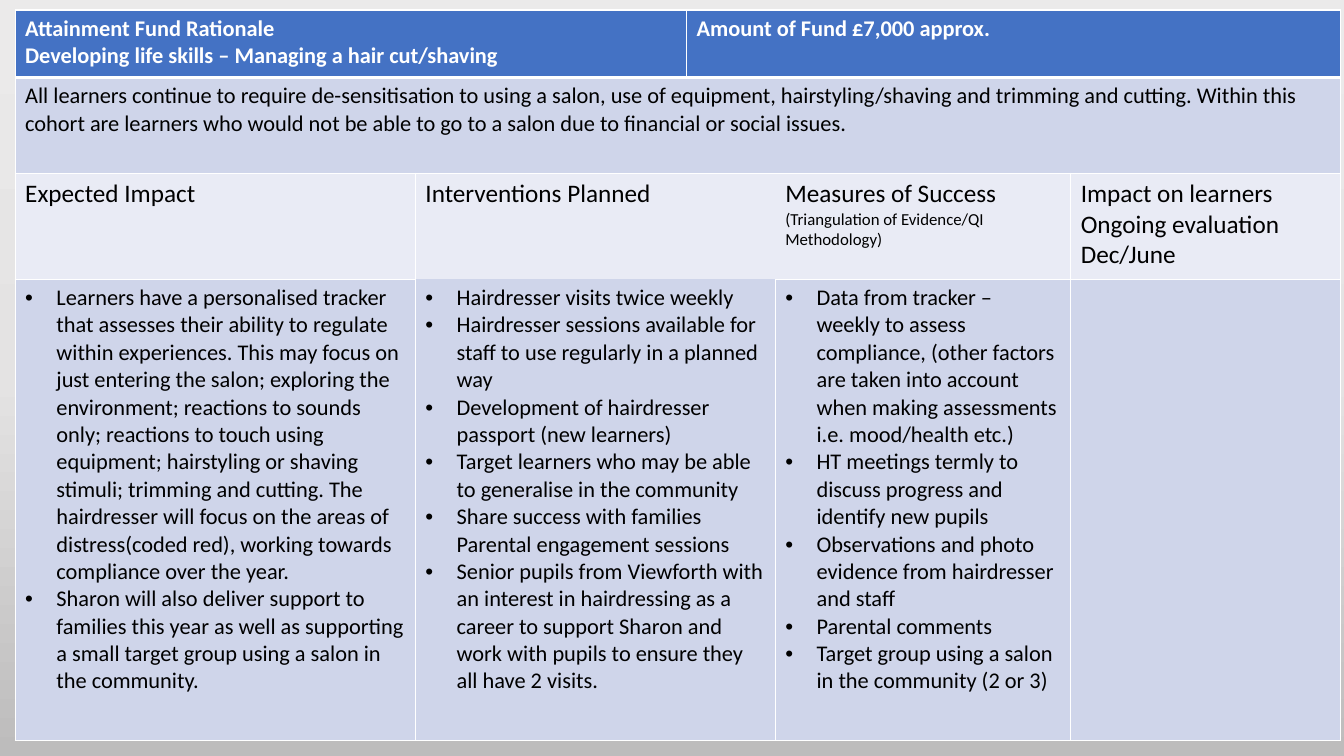
from copy import deepcopy

from lxml import etree
from pptx import Presentation
from pptx.dml.color import RGBColor
from pptx.oxml import ns
from pptx.util import Inches, Pt

WHITE = RGBColor(0xFF, 0xFF, 0xFF)
BLACK = RGBColor(0x00, 0x00, 0x00)
BLUE = RGBColor(0x44, 0x72, 0xC4)
BAND_DARK = RGBColor(0xCF, 0xD5, 0xEA)
BAND_LIGHT = RGBColor(0xE9, 0xEB, 0xF5)
BACK_TOP = RGBColor(0xEB, 0xEA, 0xEA)
BACK_MIDDLE = RGBColor(0xE4, 0xE3, 0xE3)
BACK_BOTTOM = RGBColor(0xBD, 0xBC, 0xBC)

COLUMN_WIDTHS = (3.97, 2.69, 0.88, 2.93, 2.68)
ROW_HEIGHTS = (0.67, 0.95, 1.05, 4.58)

FUND_TITLE = (
    "Attainment Fund Rationale",
    "Developing life skills – Managing a hair cut/shaving",
)
FUND_AMOUNT = ("Amount of Fund £7,000 approx.",)
RATIONALE = (
    "All learners continue to require de-sensitisation to using a salon, use of equipment, "
    "hairstyling/shaving and trimming and cutting. Within this cohort are learners who would "
    "not be able to go to a salon due to financial or social issues.",
)
IMPACTS = (
    "Learners have a personalised tracker that assesses their ability to regulate within "
    "experiences. This may focus on just entering the salon; exploring the environment; "
    "reactions to sounds only; reactions to touch using equipment; hairstyling or shaving "
    "stimuli; trimming and cutting. The hairdresser will focus on the areas of "
    "distress(coded red), working towards compliance over the year.",
    "Sharon will also deliver support to families this year as well as supporting a small "
    "target group using a salon in the community.",
)
INTERVENTIONS = (
    "Hairdresser visits twice weekly",
    "Hairdresser sessions available for staff to use regularly in a planned way",
    "Development of hairdresser passport (new learners)",
    "Target learners who may be able to generalise in the community",
    "Share success with families Parental engagement sessions",
    "Senior pupils from Viewforth with an interest in hairdressing as a career to support "
    "Sharon and work with pupils to ensure they all have 2 visits.",
)
MEASURES = (
    "Data from tracker – weekly to assess compliance, (other factors are taken into account "
    "when making assessments i.e. mood/health etc.)",
    "HT meetings termly to discuss progress and identify new pupils",
    "Observations and photo evidence from hairdresser and staff",
    "Parental comments",
    "Target group using a salon in the community (2 or 3)",
)


def paint_background(page):
    """Fill the page with a three-stop vertical gradient."""
    fill = page.background.fill
    fill.gradient()
    fill.gradient_angle = 270
    stop_list = page.element.find(".//" + ns.qn("a:gsLst"))
    stop_list.insert(1, deepcopy(stop_list[0]))
    colors = (BACK_TOP, BACK_MIDDLE, BACK_BOTTOM)
    for stop, color, position in zip(fill.gradient_stops, colors, (0, 0.5, 1)):
        stop.color.rgb = color
        stop.position = position


def set_borders(cell, bottom_width=1, hidden=""):
    """Draw white cell borders, leaving out the sides named in hidden."""
    properties = cell._tc.get_or_add_tcPr()
    for index, side in enumerate("LRTB"):
        width = bottom_width if side == "B" else 1
        line = etree.Element(ns.qn("a:ln" + side), w=str(Pt(width)))
        if side in hidden:
            etree.SubElement(line, ns.qn("a:noFill"))
        else:
            solid = etree.SubElement(line, ns.qn("a:solidFill"))
            etree.SubElement(solid, ns.qn("a:srgbClr"), val=str(WHITE))
        properties.insert(index, line)


def add_bullet(para):
    """Give a paragraph a hanging bullet."""
    properties = para._p.get_or_add_pPr()
    properties.set("marL", str(Inches(0.31)))
    properties.set("indent", str(Inches(-0.31)))
    etree.SubElement(properties, ns.qn("a:buFont"), typeface="Arial")
    etree.SubElement(properties, ns.qn("a:buChar"), char="•")


def write_cell(cell, lines, sizes=(16,), color=BLACK, bold=False, bullets=False):
    """Write one paragraph per line, the last size serving all further lines."""
    frame = cell.text_frame
    for index, line in enumerate(lines):
        para = frame.add_paragraph() if index else frame.paragraphs[0]
        if bullets:
            add_bullet(para)
        span = para.add_run()
        span.text = line
        span.font.name = "Calibri"
        span.font.size = Pt(sizes[min(index, len(sizes) - 1)])
        span.font.bold = bold
        span.font.color.rgb = color


def add_grid(page):
    """Add the empty table with its merged cells, fills and borders."""
    frame = page.shapes.add_table(
        len(ROW_HEIGHTS), len(COLUMN_WIDTHS), Inches(0.15), Inches(0.1),
        Inches(sum(COLUMN_WIDTHS)), Inches(sum(ROW_HEIGHTS)),
    )
    table = frame.table
    for column, width in zip(table.columns, COLUMN_WIDTHS):
        column.width = Inches(width)
    for row, height in zip(table.rows, ROW_HEIGHTS):
        row.height = Inches(height)
    for row, first, last in ((0, 0, 1), (0, 2, 4), (1, 0, 4), (2, 1, 2), (3, 1, 2)):
        table.cell(row, first).merge(table.cell(row, last))

    hidden_sides = {(2, 1): "RB", (2, 2): "RB", (2, 3): "L", (3, 1): "T", (3, 2): "T"}
    for row, color in enumerate((BLUE, BAND_DARK, BAND_LIGHT, BAND_DARK)):
        for column in range(len(COLUMN_WIDTHS)):
            cell = table.cell(row, column)
            cell.fill.solid()
            cell.fill.fore_color.rgb = color
            set_borders(cell, 1 if row else 3, hidden_sides.get((row, column), ""))
    return table


def main():
    """Build the fund rationale slide."""
    deck = Presentation()
    deck.slide_width, deck.slide_height = Inches(13.33), Inches(7.5)
    page = deck.slides.add_slide(deck.slide_layouts[6])
    paint_background(page)

    table = add_grid(page)
    write_cell(table.cell(0, 0), FUND_TITLE, color=WHITE, bold=True)
    write_cell(table.cell(0, 2), FUND_AMOUNT, color=WHITE, bold=True)
    write_cell(table.cell(1, 0), RATIONALE)

    write_cell(table.cell(2, 0), ("Expected Impact",), (18,))
    write_cell(table.cell(2, 1), ("Interventions Planned",), (18,))
    measures_heading = ("Measures of Success", "(Triangulation of Evidence/QI Methodology)")
    write_cell(table.cell(2, 3), measures_heading, (18, 12))
    write_cell(table.cell(2, 4), ("Impact on learners", "Ongoing evaluation Dec/June"), (18,))

    for column, points in ((0, IMPACTS), (1, INTERVENTIONS), (3, MEASURES)):
        write_cell(table.cell(3, column), points, bullets=True)

    deck.save("out.pptx")


if __name__ == "__main__":
    main()
